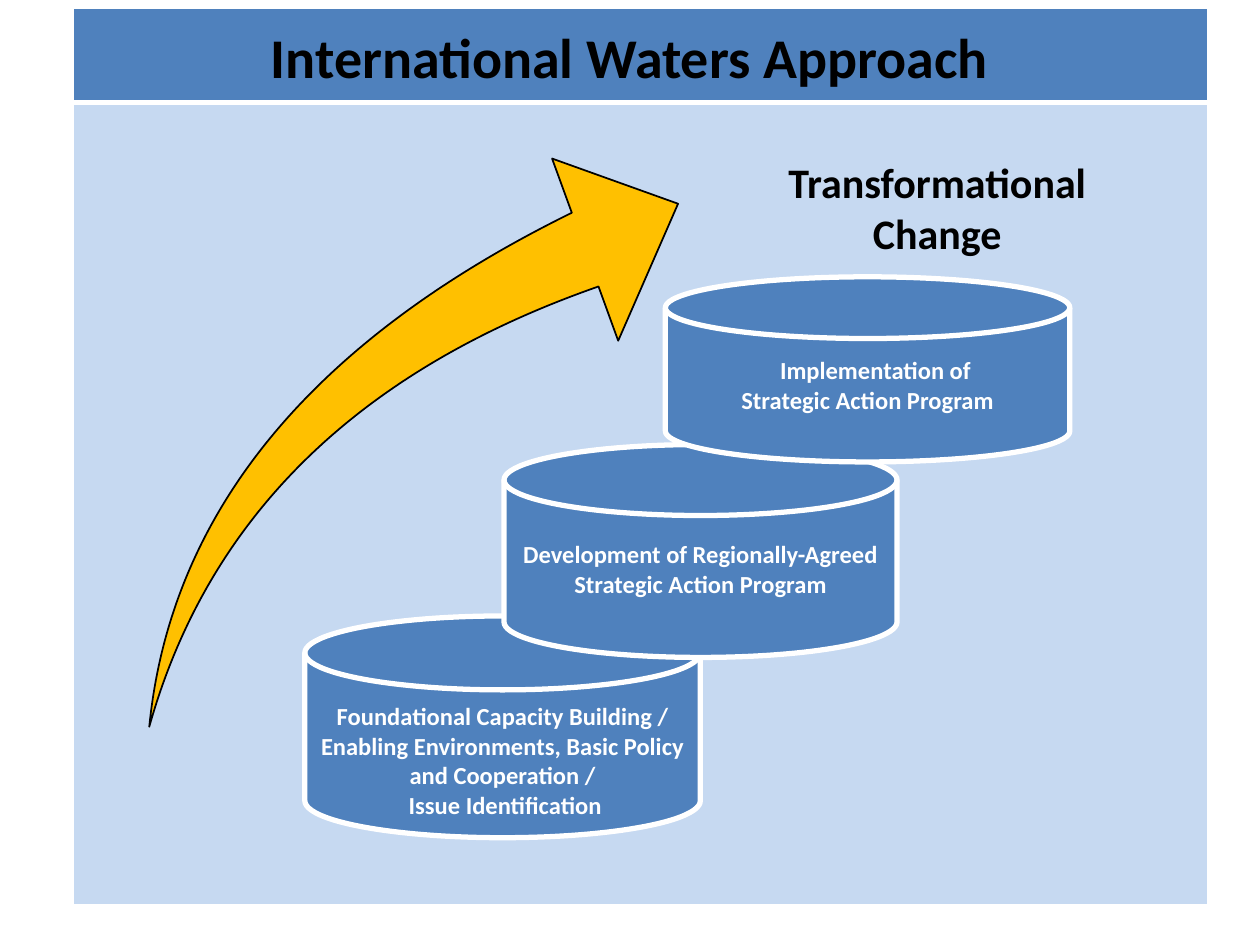
from lxml import etree
from pptx import Presentation, util as u
from pptx.dml.color import RGBColor
from pptx.enum import shapes, text
from pptx.oxml.ns import qn

BLUE = RGBColor(0x4F, 0x81, 0xBD)
PALE_BLUE = RGBColor(0xC6, 0xD9, 0xF1)
GOLD = RGBColor(0xFF, 0xC0, 0x00)
WHITE = RGBColor(0xFF, 0xFF, 0xFF)
BLACK = RGBColor(0x00, 0x00, 0x00)


class SlideBuilder:
    font = "Calibri"

    def __init__(self, slide):
        self.slide = slide

    def set_text(self, shape, lines, size, color):
        """Fill a shape with centred bold lines, given as (wording, indent)."""
        frame = shape.text_frame
        frame.text = "\n".join(wording for wording, _ in lines)
        frame.word_wrap = True
        frame.vertical_anchor = text.MSO_ANCHOR.MIDDLE
        for paragraph, (_, indent) in zip(frame.paragraphs, lines):
            paragraph.alignment = text.PP_ALIGN.CENTER
            if indent:
                paragraph._p.get_or_add_pPr().set("marL", str(u.Pt(indent)))
            for run in paragraph.runs:
                run.font.name = self.font
                run.font.size = u.Pt(size)
                run.font.bold = True
                run.font.color.rgb = color

    def label(self, box, wording, size):
        shape = self.slide.shapes.add_textbox(*map(u.Pt, box))
        self.set_text(shape, [(wording, 0)], size, BLACK)

    def shape(self, kind, box, fill, line, width):
        shape = self.slide.shapes.add_shape(kind, *map(u.Pt, box))
        shape.shadow.inherit = False
        shape.fill.solid()
        shape.fill.fore_color.rgb = fill
        shape.line.color.rgb = line
        shape.line.width = u.Pt(width)
        return shape

    def disk(self, box, lines, top_inset=3.6):
        kind = shapes.MSO_SHAPE.FLOWCHART_MAGNETIC_DISK
        shape = self.shape(kind, box, BLUE, WHITE, 3)
        self.set_text(shape, lines, 14, WHITE)
        shape.text_frame.margin_top = u.Pt(top_inset)

    def swoosh(self, box, rotation, adjustments):
        kind = shapes.MSO_SHAPE.SWOOSH_ARROW
        shape = self.shape(kind, box, GOLD, BLACK, 1)
        shape.rotation = rotation
        for index, value in enumerate(adjustments):
            shape.adjustments[index] = value

    def border(self, cell, side, width):
        properties = cell._tc.get_or_add_tcPr()
        line = etree.SubElement(properties, qn(f"a:{side}"), w=str(u.Pt(width)))
        fill = etree.SubElement(line, qn("a:solidFill"))
        etree.SubElement(fill, qn("a:srgbClr"), val=str(WHITE))

    def panel(self, left, top, width, rows):
        """Draw a one-column table; rows are (height, fill, top and bottom border)."""
        height = sum(row[0] for row in rows)
        box = map(u.Pt, (left, top, width, height))
        table = self.slide.shapes.add_table(len(rows), 1, *box).table
        for index, (row_height, fill, above, below) in enumerate(rows):
            table.rows[index].height = u.Pt(row_height)
            cell = table.cell(index, 0)
            for side, weight in (("lnL", 1), ("lnR", 1), ("lnT", above), ("lnB", below)):
                self.border(cell, side, weight)
            cell.fill.solid()
            cell.fill.fore_color.rgb = fill


def main():
    presentation = Presentation()
    presentation.slide_width = u.Pt(720)
    presentation.slide_height = u.Pt(540)
    builder = SlideBuilder(presentation.slides.add_slide(presentation.slide_layouts[6]))

    # Title band and body panel
    builder.panel(42, 4.5, 648, [(54, BLUE, 1, 3), (458.5, PALE_BLUE, 3, 1)])

    # Three steps, from the foundation up
    builder.disk((174.2, 352, 226, 126.7), [
        ("Foundational Capacity Building / Enabling Environments, Basic Policy "
         "and Cooperation /", 0),
        ("Issue Identification", 3),
    ], top_inset=20.5)
    builder.disk((288, 254, 224.6, 121.7), [
        ("Development of Regionally-Agreed Strategic Action Program", 0),
    ])
    builder.disk((380.2, 158.2, 231.1, 105.8), [
        ("Implementation of", 9),
        ("Strategic Action Program", 0),
    ])

    # Rising arrow
    builder.swoosh((49.7, 114.5, 363.6, 262), 346.5, (0.17, 0.23))

    # Headings
    builder.label((435.6, 103, 200, 31), "Transformational Change", 24)
    builder.label((42, 4.5, 635.8, 54.7), "International Waters Approach", 32)

    presentation.save("out.pptx")


if __name__ == "__main__":
    main()
